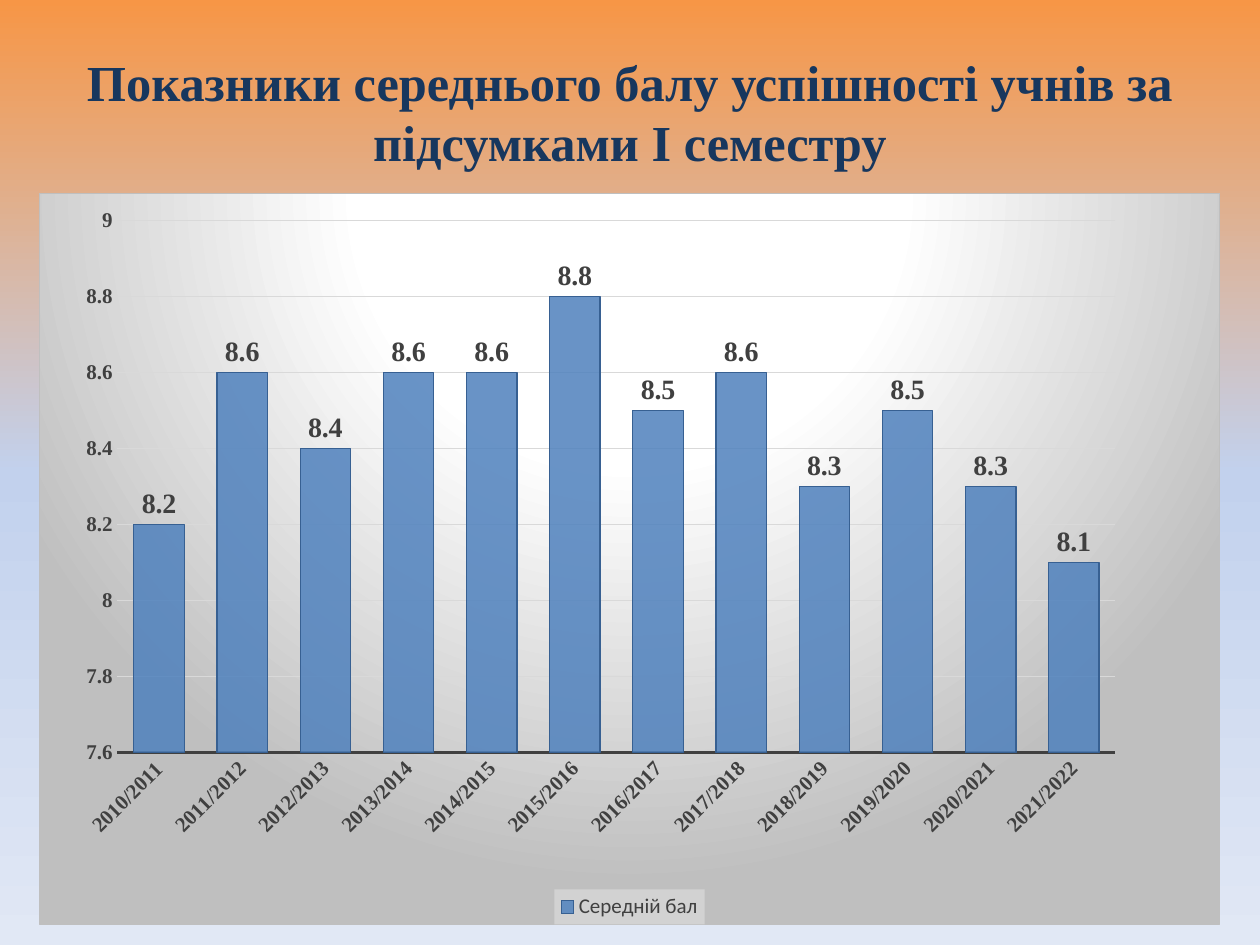
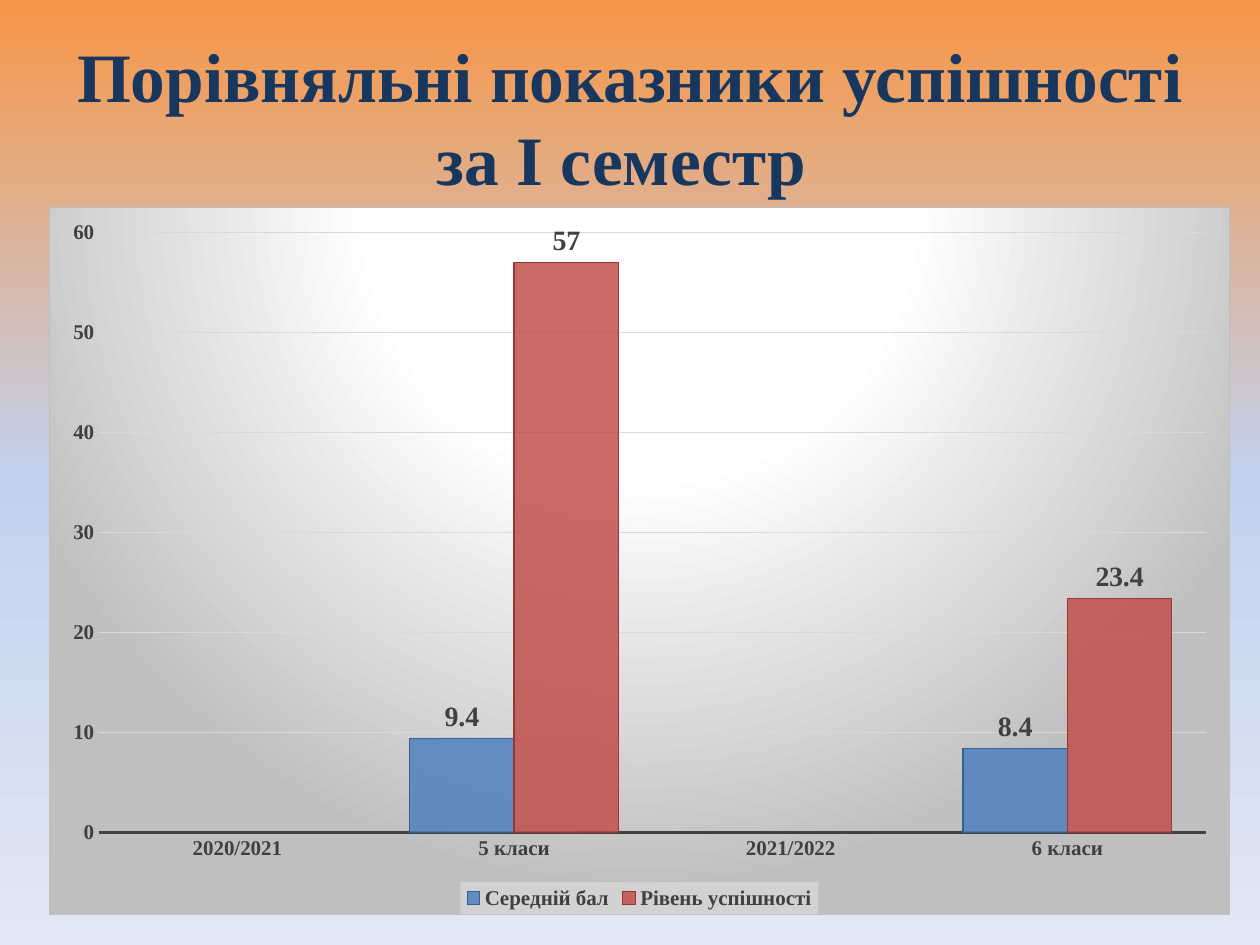
from dataclasses import dataclass

from lxml import etree
from pptx import Presentation
from pptx import util as u
from pptx.chart import data as chart_data
from pptx.dml import color
from pptx.enum import chart as kinds, text
from pptx.oxml import ns, parse_xml

EMU_PER_PX = 914400 / 126
SERIF, SANS = "Times New Roman", "Calibri"
TITLE_COLOR, TEXT_COLOR, GRID_COLOR, EDGE_COLOR = "17375E", "404040", "D9D9D9", "BFBFBF"
PAGE_STOPS = ((0, "F79646"), (50, "C2D1ED"), (100, "E1E8F5"))
CHART_STOPS = ((0, "FFFFFF"), (39, "FFFFFF"), (100, "BFBFBF"))
DOWNWARD = '<a:lin ang="5400000" scaled="0"/>'
FROM_ABOVE = '<a:path path="circle"><a:fillToRect l="50000" t="-80000" r="50000" b="180000"/></a:path>'
AUTOMATIC_TURN = "-60000000"


@dataclass(frozen=True)
class Box:
    left: int
    top: int
    width: int
    height: int

    def emu(self) -> tuple:
        return tuple(px(n) for n in (self.left, self.top, self.width, self.height))


@dataclass(frozen=True)
class Bars:
    name: str
    values: tuple
    fill: str
    line: str


@dataclass(frozen=True)
class ScorePage:
    title: str
    title_size: float
    title_box: Box
    chart_box: Box
    plot_area: tuple
    categories: tuple
    bars: tuple
    scale: tuple
    legend_font: str
    legend_bold: bool


YEARS = tuple(f"{year}/{year + 1}" for year in range(2010, 2022))
AVERAGE = ("Середній бал", "4F81BD", "376092")
LEVEL = ("Рівень успішності", "C0504D", "953735")


def bars(style: tuple, *values: float | None) -> Bars:
    name, fill, line = style
    return Bars(name, values, fill, line)


PAGES = (
    ScorePage(
        "Показники середнього балу успішності учнів за підсумками І семестру",
        28.8, Box(35, 38, 1190, 147), Box(39, 193, 1181, 732),
        (0.066, 0.037, 0.846, 0.728), YEARS,
        (bars(AVERAGE, 8.2, 8.6, 8.4, 8.6, 8.6, 8.8, 8.5, 8.6, 8.3, 8.5, 8.3, 8.1),),
        (7.6, 9, 0.2), SANS, False,
    ),
    ScorePage(
        "Порівняльні показники успішності за І семестр ",
        39.6, Box(63, 38, 1134, 156), Box(49, 207, 1181, 708),
        (0.042, 0.035, 0.938, 0.849),
        ("2020/2021", "5 класи", "2021/2022", "6 класи"),
        (bars(AVERAGE, None, 9.4, None, 8.4), bars(LEVEL, None, 57, None, 23.4)),
        (0, 60, 10), SERIF, True,
    ),
)


def px(count: int) -> u.Emu:
    return u.Emu(round(count * EMU_PER_PX))


def rgb(code: str) -> color.RGBColor:
    return color.RGBColor.from_string(code)


def set_font(font, size: float, code: str, bold: bool = True, name: str = SERIF) -> None:
    font.size, font.bold, font.name = u.Pt(size), bold, name
    font.color.rgb = rgb(code)


def set_line(line, code: str, width: float) -> None:
    line.color.rgb = rgb(code)
    line.width = u.Pt(width)


def gradient(stops: tuple, direction: str) -> str:
    marks = "".join(
        f'<a:gs pos="{place * 1000}"><a:srgbClr val="{code}"/></a:gs>' for place, code in stops
    )
    return f'<a:gradFill {ns.nsdecls("a")} rotWithShape="1"><a:gsLst>{marks}</a:gsLst>{direction}</a:gradFill>'


def chart_format(content: str):
    return parse_xml(f'<c:spPr {ns.nsdecls("c", "a")}>{content}</c:spPr>')


def paint_background(page) -> None:
    page.background.fill.solid()
    plain = page.element.xpath(".//p:bgPr/a:solidFill")[0]
    plain.getparent().replace(plain, parse_xml(gradient(PAGE_STOPS, DOWNWARD)))


def add_title(page, score: ScorePage) -> None:
    frame = page.shapes.add_textbox(*score.title_box.emu()).text_frame
    frame.word_wrap = True
    frame.vertical_anchor = text.MSO_ANCHOR.MIDDLE
    para = frame.paragraphs[0]
    para.text = score.title
    para.alignment = text.PP_ALIGN.CENTER
    set_font(para.font, score.title_size, TITLE_COLOR)


def style_axes(chart, score: ScorePage) -> None:
    for axis in (chart.category_axis, chart.value_axis):
        axis.major_tick_mark = axis.minor_tick_mark = kinds.XL_TICK_MARK.NONE
        set_font(axis.tick_labels.font, 12, TEXT_COLOR)
    set_line(chart.category_axis.format.line, TEXT_COLOR, 1.5)
    values = chart.value_axis
    values.minimum_scale, values.maximum_scale, values.major_unit = score.scale
    values.format.line.fill.background()
    values.has_major_gridlines = True
    set_line(values.major_gridlines.format.line, GRID_COLOR, 0.75)
    for body in chart.element.xpath(".//c:catAx/c:txPr/a:bodyPr"):
        body.set("rot", AUTOMATIC_TURN)
        body.set("vert", "horz")


def style_bars(chart, score: ScorePage) -> None:
    plot = chart.plots[0]
    plot.gap_width, plot.overlap, plot.vary_by_categories = 65, 0, False
    for series, look in zip(plot.series, score.bars):
        series.format.fill.solid()
        series.format.fill.fore_color.rgb = rgb(look.fill)
        set_line(series.format.line, look.line, 0.75)
        labels = series.data_labels
        labels.show_value = True
        labels.position = kinds.XL_LABEL_POSITION.OUTSIDE_END
        set_font(labels.font, 16, TEXT_COLOR)
    for tint in chart.element.xpath(".//c:ser/c:spPr/a:solidFill/a:srgbClr"):
        etree.SubElement(tint, ns.qn("a:alpha")).set("val", "85000")


def style_legend(chart, score: ScorePage) -> None:
    chart.has_legend = True
    legend = chart.legend
    legend.position = kinds.XL_LEGEND_POSITION.BOTTOM
    legend.include_in_layout = False
    set_font(legend.font, 12, TEXT_COLOR, score.legend_bold, score.legend_font)
    chart.element.xpath(".//c:legend/c:txPr")[0].addprevious(chart_format(
        '<a:solidFill><a:srgbClr val="F2F2F2"><a:alpha val="39000"/></a:srgbClr></a:solidFill>'
    ))


def style_frame(chart, score: ScorePage) -> None:
    border = (f'<a:ln w="9525"><a:solidFill><a:srgbClr val="{EDGE_COLOR}"/>'
              '</a:solidFill></a:ln>')
    chart.element.find(ns.qn("c:chart")).addnext(
        chart_format(gradient(CHART_STOPS, FROM_ABOVE) + border))
    area = chart.element.xpath(".//c:plotArea")[0]
    for layout in area.findall(ns.qn("c:layout")):
        area.remove(layout)
    sides = "".join(f'<c:{side} val="{part}"/>' for side, part in zip("xywh", score.plot_area))
    area.insert(0, parse_xml(
        f'<c:layout {ns.nsdecls("c")}><c:manualLayout><c:layoutTarget val="inner"/>'
        f'<c:xMode val="edge"/><c:yMode val="edge"/>{sides}</c:manualLayout></c:layout>'
    ))


def add_score_chart(page, score: ScorePage) -> None:
    data = chart_data.CategoryChartData()
    data.categories = score.categories
    for item in score.bars:
        data.add_series(item.name, item.values)
    chart = page.shapes.add_chart(
        kinds.XL_CHART_TYPE.COLUMN_CLUSTERED, *score.chart_box.emu(), data).chart
    chart.has_title = False
    set_font(chart.font, 10, "000000", False, SANS)
    for style in (style_axes, style_bars, style_legend, style_frame):
        style(chart, score)


def main() -> None:
    deck = Presentation()
    deck.slide_width, deck.slide_height = px(1260), px(945)
    for score in PAGES:
        page = deck.slides.add_slide(deck.slide_layouts[6])
        paint_background(page)
        add_title(page, score)
        add_score_chart(page, score)
    deck.save("out.pptx")


if __name__ == "__main__":
    main()
